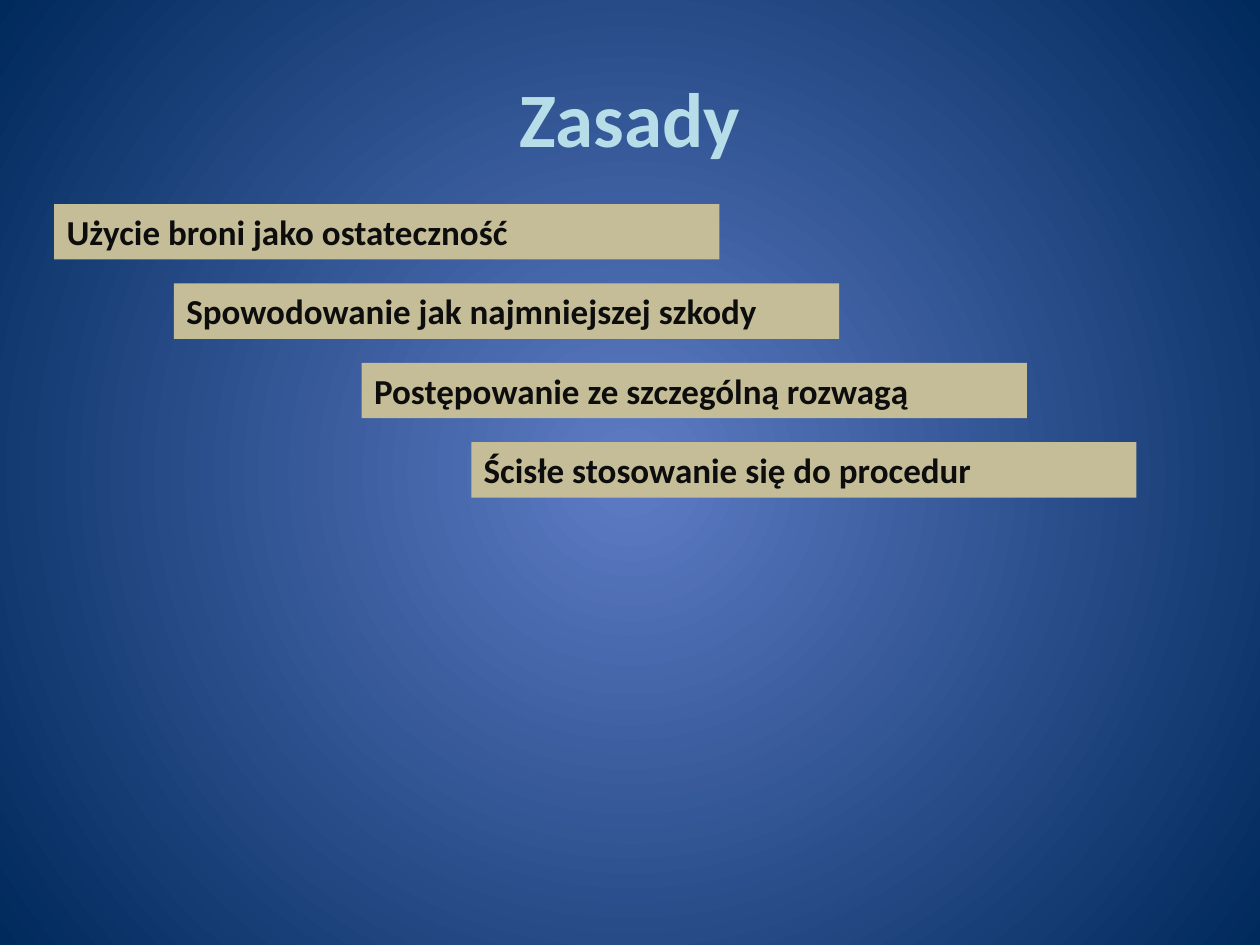
import pptx
import pptx.dml.color
import pptx.enum.shapes
import pptx.enum.text
import pptx.oxml
import pptx.oxml.ns
import pptx.util
from pptx.util import Inches

COLORS = {
    "glow": "5E7CC5",
    "navy": "00295C",
    "title": "B7DEE8",
    "bar": "C4BD97",
    "ink": "0D0D0D",
}
FONT = "Calibri"


def rgb(name):
    return pptx.dml.color.RGBColor.from_string(COLORS[name])


def write_text(shape, text, size, color, align, anchor):
    frame = shape.text_frame
    frame.word_wrap = True
    frame.vertical_anchor = anchor
    paragraph = frame.paragraphs[0]
    paragraph.alignment = align
    run = paragraph.add_run()
    run.text = text
    run.font.name = FONT
    run.font.size = pptx.util.Pt(size)
    run.font.bold = True
    run.font.color.rgb = rgb(color)


presentation = pptx.Presentation()
presentation.slide_width = Inches(10)
presentation.slide_height = Inches(7.5)
slide = presentation.slides.add_slide(presentation.slide_layouts[5])

background = slide.background.fill
background.gradient()
for stop, color in zip(background.gradient_stops, ("glow", "navy")):
    stop.color.rgb = rgb(color)
linear = slide.element.find(".//" + pptx.oxml.ns.qn("a:lin"))
radial = pptx.oxml.parse_xml(
    f'<a:path {pptx.oxml.ns.nsdecls("a")} path="circle">'
    '<a:fillToRect l="50000" t="50000" r="50000" b="50000"/></a:path>'
)
linear.getparent().replace(linear, radial)

title = slide.shapes.title
title.left, title.top = Inches(0.5), Inches(0.3)
title.width, title.height = Inches(9), Inches(1.25)
write_text(
    title, "Zasady", size=44, color="title",
    align=pptx.enum.text.PP_ALIGN.CENTER,
    anchor=pptx.enum.text.MSO_ANCHOR.MIDDLE,
)

rules = [
    (0.43, "Użycie broni jako ostateczność"),
    (1.38, "Spowodowanie jak najmniejszej szkody"),
    (2.87, "Postępowanie ze szczególną rozwagą"),
    (3.74, "Ścisłe stosowanie się do procedur"),
]
for row, (left, text) in enumerate(rules):
    bar = slide.shapes.add_shape(
        pptx.enum.shapes.MSO_SHAPE.RECTANGLE,
        Inches(left), Inches(1.62 + 0.63 * row), Inches(5.28), Inches(0.44),
    )
    bar.shadow.inherit = False
    bar.fill.solid()
    bar.fill.fore_color.rgb = rgb("bar")
    bar.line.fill.background()
    bar.text_frame.auto_size = pptx.enum.text.MSO_AUTO_SIZE.SHAPE_TO_FIT_TEXT
    write_text(
        bar, text, size=20, color="ink",
        align=pptx.enum.text.PP_ALIGN.LEFT,
        anchor=pptx.enum.text.MSO_ANCHOR.TOP,
    )

presentation.save("out.pptx")
